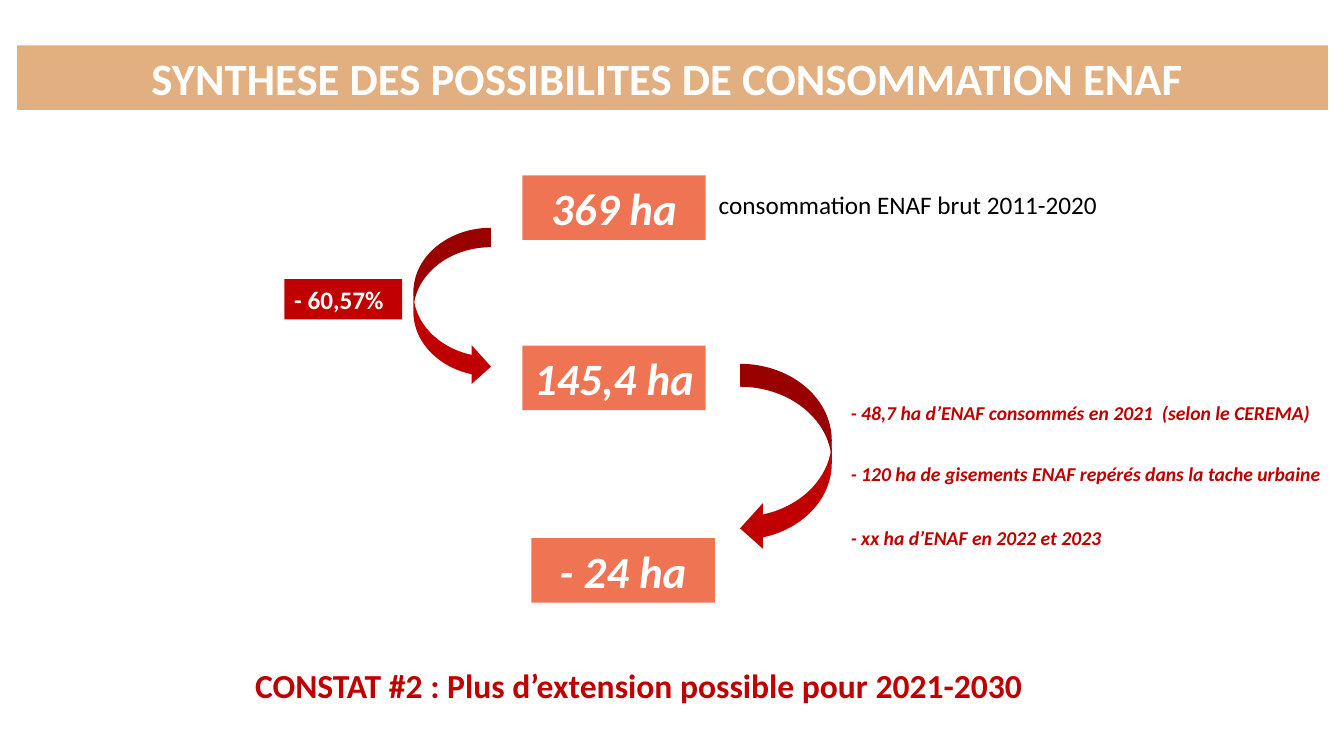
from pptx import Presentation
from pptx.dml.color import RGBColor
from pptx.enum.shapes import MSO_SHAPE
from pptx.enum.text import MSO_ANCHOR, PP_ALIGN
from pptx.util import Inches, Pt

RECTANGLE = MSO_SHAPE.RECTANGLE
CURVED_ARROW = MSO_SHAPE.CURVED_RIGHT_ARROW
LEFT, CENTER = PP_ALIGN.LEFT, PP_ALIGN.CENTER
TOP = MSO_ANCHOR.TOP

COLORS = {"sand": "E2AF81", "coral": "EF7453", "red": "C00000",
          "white": "FFFFFF", "black": "000000"}

TITLE = "SYNTHESE DES POSSIBILITES DE CONSOMMATION ENAF "
# (text, left, top)
AREAS = [("369 ha", 5.18, 1.74), ("145,4 ha", 5.18, 3.43), ("- 24 ha", 5.27, 5.34)]
AREA_SIZE = (1.82, 0.64)
GROSS_USE = "consommation ENAF brut 2011-2020"
REDUCTION = "- 60,57%"
# (text, top, width)
DEDUCTIONS = [
    ("- 48,7 ha d’ENAF consommés en 2021  (selon le CEREMA)", 3.93, 5.73),
    ("- 120 ha de gisements ENAF repérés dans la tache urbaine", 4.53, 5.36),
    ("- xx ha d’ENAF en 2022 et 2023", 5.17, 5.36),
]
FINDING = "CONSTAT #2 : Plus d’extension possible pour 2021-2030"
# (box, mirrored)
ARROWS = [((4.1, 2.26, 0.77, 1.57), False), ((7.34, 3.61, 0.91, 1.86), True)]


def rgb(color):
    return RGBColor.from_string(COLORS[color])


def add_filled(slide, preset, box, color):
    shape = slide.shapes.add_shape(preset, *map(Inches, box))
    shape.shadow.inherit = False
    shape.fill.solid()
    shape.fill.fore_color.rgb = rgb(color)
    shape.line.fill.background()
    return shape


def add_label(slide, text, box, size, color, fill=None, align=LEFT,
              bold=True, italic=False, before=0):
    """Write one line of text, on a filled rectangle when fill is given."""
    if fill:
        label = add_filled(slide, RECTANGLE, box, fill)
    else:
        label = slide.shapes.add_textbox(*map(Inches, box))
    frame = label.text_frame
    frame.text = text
    frame.word_wrap = True
    frame.vertical_anchor = TOP
    paragraph = frame.paragraphs[0]
    paragraph.alignment = align
    paragraph.space_before = Pt(before)
    font = paragraph.runs[0].font
    font.name, font.size = "Calibri", Pt(size)
    font.bold, font.italic = bold, italic
    font.color.rgb = rgb(color)


def main():
    prs = Presentation()
    prs.slide_width, prs.slide_height = Inches(13.33), Inches(7.5)
    slide = prs.slides.add_slide(prs.slide_layouts[6])

    add_label(slide, TITLE, (0.17, 0.45, 13, 0.64), 32, "white", "sand", CENTER)
    for text, left, top in AREAS:
        add_label(slide, text, (left, top, *AREA_SIZE), 32, "white", "coral",
                  CENTER, italic=True)
    for box, mirrored in ARROWS:
        arrow = add_filled(slide, CURVED_ARROW, box, "red")
        if mirrored:
            arrow.element.spPr.xfrm.set("flipH", "1")
    for text, top, width in DEDUCTIONS:
        add_label(slide, text, (8.34, top, width, 0.34), 14, "red",
                  italic=True, before=6)
    add_label(slide, REDUCTION, (2.82, 2.77, 1.17, 0.4), 18, "white", "red")
    add_label(slide, FINDING, (1.34, 6.55, 9.99, 0.5), 24, "red", align=CENTER)
    add_label(slide, GROSS_USE, (7.03, 1.83, 4.09, 0.4), 18, "black", bold=False)

    prs.save("out.pptx")


if __name__ == "__main__":
    main()
